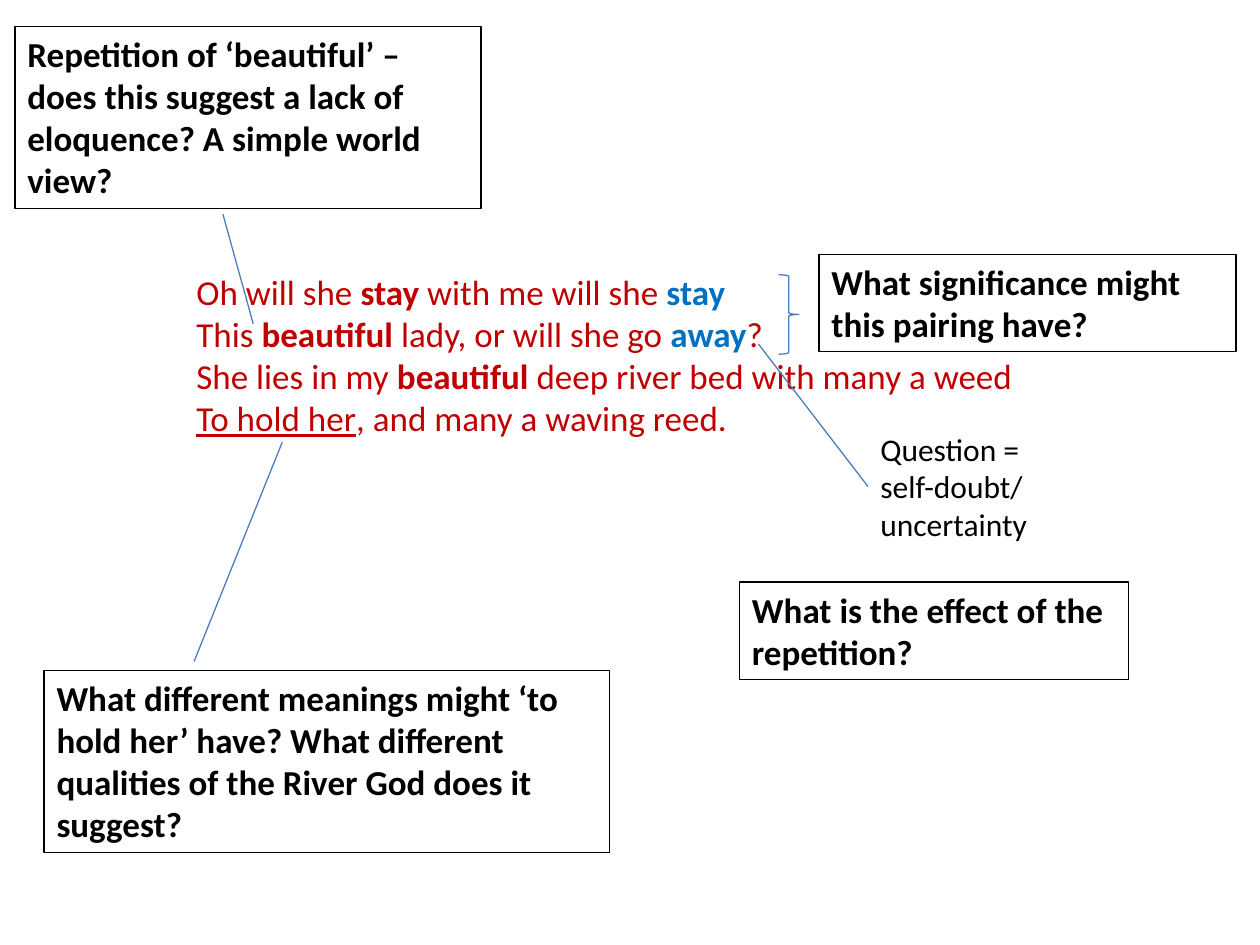
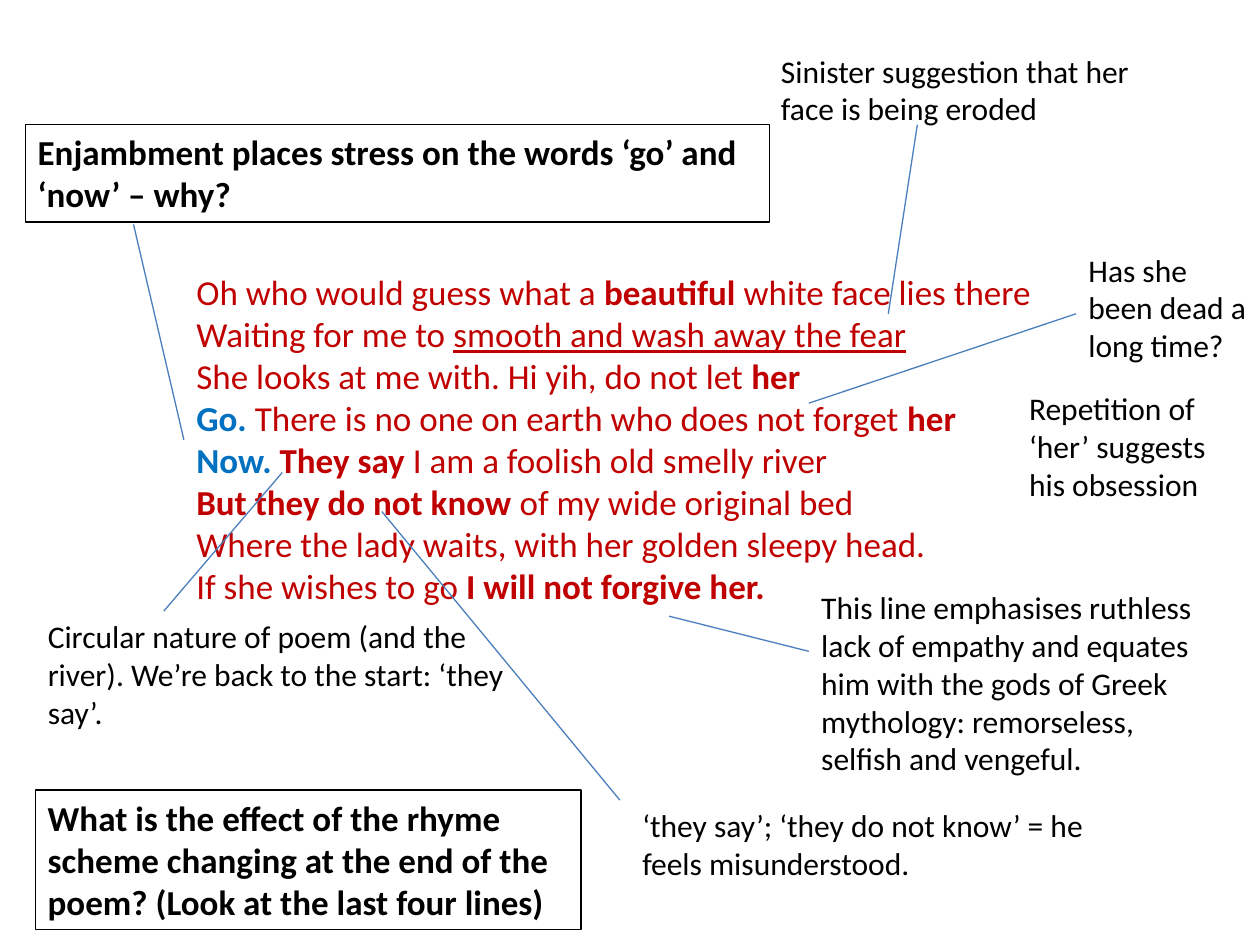
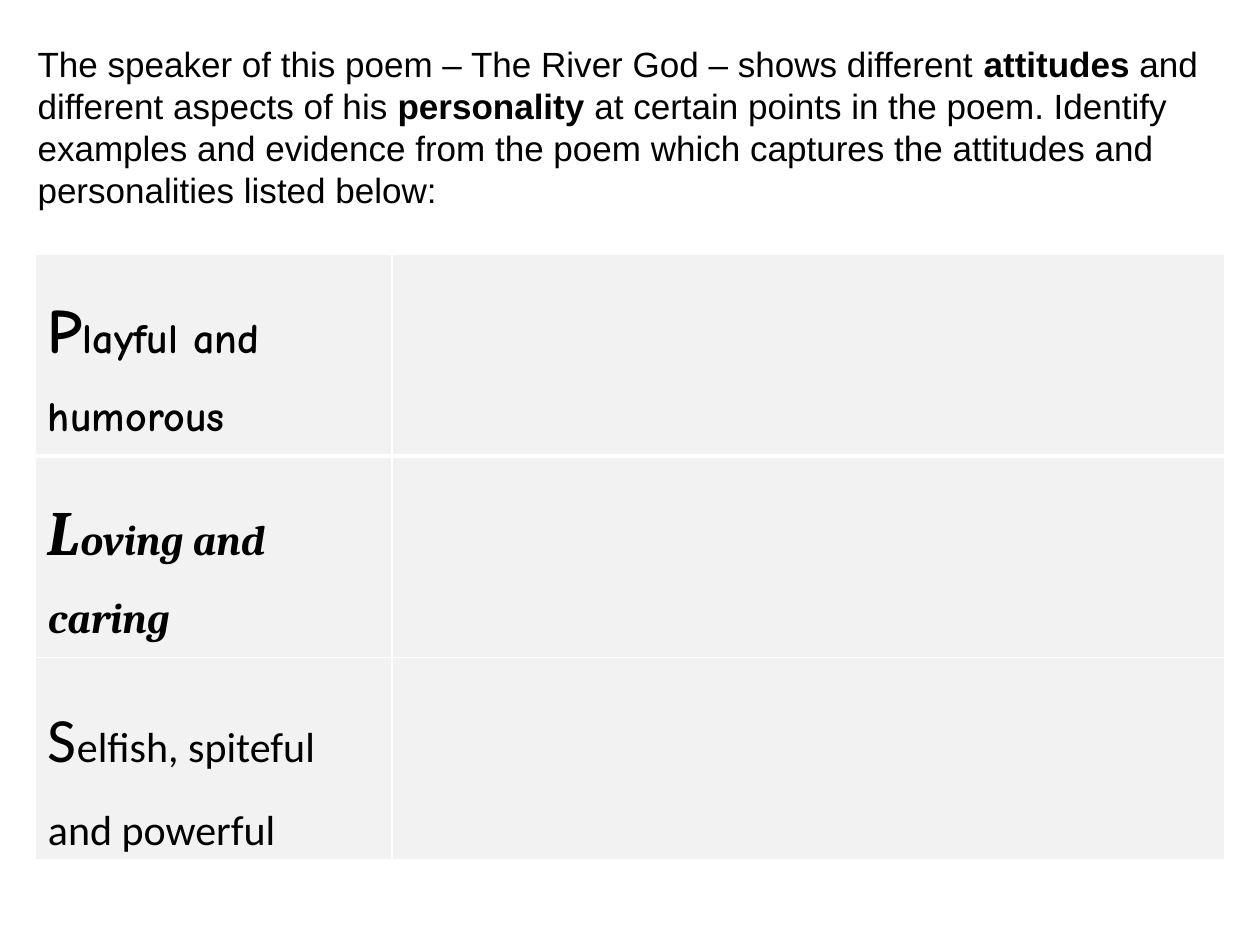
from dataclasses import dataclass

from lxml.etree import SubElement
from pptx import Presentation
from pptx.dml.color import RGBColor
from pptx.enum.shapes import MSO_CONNECTOR, MSO_SHAPE
from pptx.enum.text import MSO_ANCHOR, PP_ALIGN
from pptx.oxml.ns import qn
from pptx.util import Pt


@dataclass(frozen=True)
class Theme:
    ink: str = "000000"
    poem: str = "C00000"
    accent: str = "0070C0"
    line: str = "4B7EBC"
    cell: str = "F2F2F2"
    grid: str = "FFFFFF"
    font: str = "Calibri"
    intro_font: str = "Arial"
    body: float = 20
    note: float = 18
    initial: float = 36
    trait: float = 24
    thin: float = 0.75


THEME = Theme()
POEM_AT = (105.1, 151.2, 555.8)


def rgb(value):
    return RGBColor.from_string(value)


def format_run(r, size, color=THEME.ink, font=THEME.font, marks=""):
    """Marks: b bold, i italic, u underline, a accent colour."""
    r.font.name, r.font.size = font, Pt(size)
    r.font.color.rgb = rgb(THEME.accent if "a" in marks else color)
    r.font.bold = "b" in marks
    r.font.italic = "i" in marks
    r.font.underline = "u" in marks


def write(tf, paragraphs, size, **style):
    """Each paragraph is a list of (text, marks) runs."""
    tf.word_wrap = True
    tf.vertical_anchor = MSO_ANCHOR.TOP
    for i, runs in enumerate(paragraphs):
        p = tf.paragraphs[0] if i == 0 else tf.add_paragraph()
        p.alignment = PP_ALIGN.LEFT
        for text, marks in runs:
            r = p.add_run()
            r.text = text
            format_run(r, size, marks=marks, **style)


def box_height(lines, size):
    return Pt(lines * size * 1.21 + 7.2)


def add_text(slide, at, lines, paragraphs, size, **style):
    left, top, width = map(Pt, at)
    sp = slide.shapes.add_textbox(left, top, width, box_height(lines, size))
    write(sp.text_frame, paragraphs, size, **style)


def add_poem(slide, verses):
    add_text(slide, POEM_AT, len(verses), verses, THEME.body, color=THEME.poem)


def add_note(slide, at, lines, *texts):
    add_text(slide, at, lines, [[(text, "")] for text in texts], THEME.note)


def add_outline(slide, kind, left, top, width, height, color):
    sp = slide.shapes.add_shape(kind, left, top, width, height)
    sp.shadow.inherit = False
    sp.fill.background()
    sp.line.color.rgb = rgb(color)
    sp.line.width = Pt(THEME.thin)
    return sp


def add_question(slide, at, lines, *texts):
    left, top, width = map(Pt, at)
    sp = add_outline(slide, MSO_SHAPE.RECTANGLE, left, top, width,
                     box_height(lines, THEME.body), THEME.ink)
    write(sp.text_frame, [[(text, "b")] for text in texts], THEME.body)


def add_pointer(slide, *ends):
    line = slide.shapes.add_connector(MSO_CONNECTOR.STRAIGHT, *map(Pt, ends))
    line.line.color.rgb = rgb(THEME.line)
    line.line.width = Pt(THEME.thin)
    SubElement(line._element.spPr, qn("a:effectLst"))


def set_borders(cell, **widths):
    tcPr = cell._tc.get_or_add_tcPr()
    for i, side in enumerate("LRTB"):
        ln = tcPr.makeelement(qn(f"a:ln{side}"), {"w": str(Pt(widths.get(side, 1)))})
        fill = SubElement(ln, qn("a:solidFill"))
        SubElement(fill, qn("a:srgbClr"), val=THEME.grid)
        tcPr.insert(i, ln)


def add_trait_table(slide, traits):
    row_height = Pt(113.5)
    columns = (Pt(203.8), Pt(475.9))
    table = slide.shapes.add_table(len(traits), 2, Pt(20.2), Pt(145.4),
                                   sum(columns), row_height * len(traits)).table
    table.first_row = table.horz_banding = False
    for column, width in zip(table.columns, columns):
        column.width = width
    for i, (text, font, marks) in enumerate(traits):
        table.rows[i].height = row_height
        for cell in table.rows[i].cells:
            cell.fill.solid()
            cell.fill.fore_color.rgb = rgb(THEME.cell)
            # A heavier rule separates the first row from the rest
            set_borders(cell, B=3 if i == 0 else 1, T=3 if i == 1 else 1)
        # Large initial letter
        p = table.cell(i, 0).text_frame.paragraphs[0]
        p.line_spacing = 1.5
        for part, size in ((text[0], THEME.initial), (text[1:], THEME.trait)):
            r = p.add_run()
            r.text = part
            format_run(r, size, font=font, marks=marks)


def build_stay_slide(slide):
    add_poem(slide, [
        [("Oh will she ", ""), ("stay", "b"), (" with me will she ", ""), ("stay", "ab")],
        [("This ", ""), ("beautiful", "b"), (" lady, or will she go ", ""),
         ("away", "ab"), ("?", "")],
        [("She lies in my ", ""), ("beautiful", "b"),
         (" deep river bed with many a weed", "")],
        [("To hold her", "u"), (", and many a waving reed.", "")],
    ])
    # Repetition
    add_question(slide, (8.6, 15.1, 266.4), 4,
                 "Repetition of ‘beautiful’ – does this suggest a lack of eloquence? "
                 "A simple world view?")
    add_pointer(slide, 144.7, 185, 127.4, 122.4)
    # Pairing
    add_outline(slide, MSO_SHAPE.RIGHT_BRACE, Pt(445), Pt(157), Pt(11.5), Pt(45.4),
                THEME.line)
    add_note(slide, (496, 242, 124.6), 3, "Question = self-doubt/ uncertainty")
    add_pointer(slide, 433.4, 196.6, 496, 278)
    add_question(slide, (468, 145.4, 238.3), 2,
                 "What significance might this pairing have?")
    add_question(slide, (422.6, 332.6, 222.5), 2,
                 "What is the effect of the", "repetition?")
    # Holding
    add_pointer(slide, 161.3, 252.7, 110.9, 378)
    add_question(slide, (25.2, 383, 323.3), 4,
                 "What different meanings might ‘to hold her’ have? What different "
                 "qualities of the River God does it suggest?")


def build_ending_slide(slide):
    add_poem(slide, [
        [("Oh who would guess what a ", ""), ("beautiful", "b"),
         (" white face lies there", "")],
        [("Waiting for me to ", ""), ("smooth and wash away the fear", "u")],
        [("She looks at me with. Hi yih, do not let ", ""), ("her", "b")],
        [("Go. ", "ab"), ("There is no one on earth who does not forget ", ""),
         ("her", "b")],
        [("Now. ", "ab"), ("They say ", "b"), ("I am a foolish old smelly river", "")],
        [("But they do not know ", "b"), ("of my wide original bed", "")],
        [("Where the lady waits, with her golden sleepy head.", "")],
        [("If she wishes to go ", ""), ("I will not forgive her.", "b")],
    ])
    # Face and obsession
    add_note(slide, (439.2, 25.9, 254.9), 2,
             "Sinister suggestion that her", "face is being eroded")
    add_pointer(slide, 507.6, 179.3, 524.2, 71.3)
    add_note(slide, (581, 218.9, 124.6), 3, "Repetition of ‘her’ suggests his obsession")
    add_note(slide, (614.9, 139.7, 105.1), 3, "Has she been dead a long time?")
    add_pointer(slide, 462.2, 230.4, 614.9, 179.3)
    # Enjambment
    add_question(slide, (14.4, 71.3, 425.5), 2,
                 "Enjambment places stress on the words ‘go’ and ‘now’ – why?")
    add_pointer(slide, 105.1, 251.3, 76.3, 128.2)
    # Circular structure
    add_pointer(slide, 161.3, 270, 93.6, 349.2)
    add_note(slide, (20.2, 349.2, 289.4), 3,
             "Circular nature of poem (and the river). We’re back to the start: "
             "‘they say’.")
    # Last line
    add_note(slide, (462.2, 332.6, 226.8), 5,
             "This line emphasises ruthless", "lack of empathy and equates",
             "him with the gods of Greek", "mythology: remorseless,",
             "selfish and vengeful.")
    add_pointer(slide, 382.3, 352.1, 462.2, 372.2)
    # Misunderstood speaker and rhyme scheme
    add_pointer(slide, 218.2, 292.3, 354.2, 457.2)
    add_note(slide, (360, 457.2, 300.2), 2,
             "‘they say’; ‘they do not know’ = he feels misunderstood.")
    add_question(slide, (20.2, 451.4, 311.8), 3,
                 "What is the effect of the rhyme scheme changing at the end of the "
                 "poem? (Look at the last four lines)")


def build_personality_slide(slide):
    add_text(slide, (14.4, 20.9, 686.2), 5, [[
        ("The speaker of this poem – The River God – shows different ", ""),
        ("attitudes", "b"), (" and different aspects of his ", ""),
        ("personality ", "b"),
        ("at certain points in the poem. Identify examples and evidence from the "
         "poem which captures the attitudes and personalities listed below:", ""),
    ]], THEME.body, font=THEME.intro_font)
    add_trait_table(slide, [
        ("Playful and humorous", "Comic Neue", "b"),
        ("Loving and caring", "Cambria", "bi"),
        ("Selfish, spiteful and powerful", THEME.font, ""),
    ])


def main():
    prs = Presentation()
    prs.slide_width, prs.slide_height = Pt(720), Pt(540)
    blank = prs.slide_layouts[6]
    for build in (build_stay_slide, build_ending_slide, build_personality_slide):
        build(prs.slides.add_slide(blank))
    prs.save("out.pptx")


if __name__ == "__main__":
    main()
